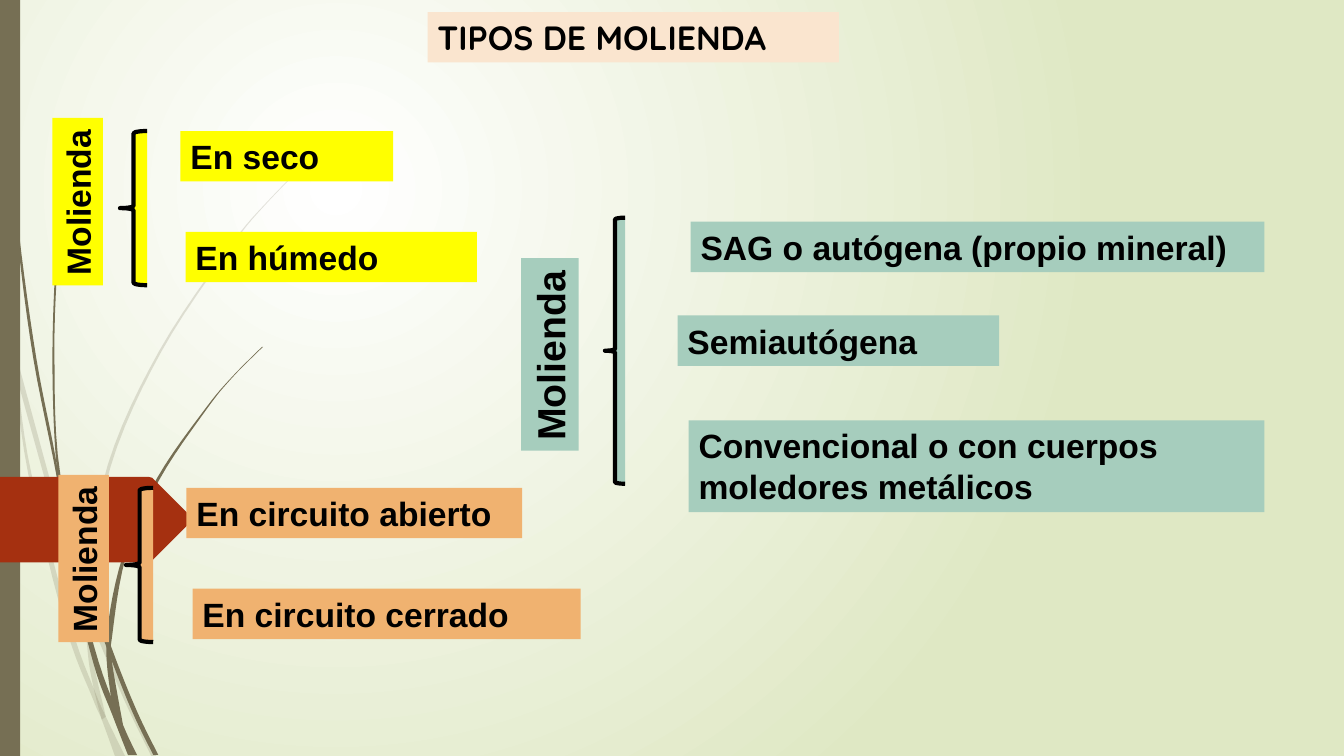
"""Build the slide on types of grinding, with its leafy background."""
from lxml import etree
from pptx import Presentation
from pptx import util as u
from pptx.dml.color import RGBColor
from pptx.enum import shapes, text
from pptx.oxml import ns

BLACK, OLIVE, RUST, PEACH = "000000", "766F54", "A53010", "FAE5CF"
YELLOW, GREEN, ORANGE = "FFFF00", "A6CDBD", "F0B270"
GLOW = ("FFFFFF", "DFE8C4")

TITLE = ("TIPOS DE MOLIENDA", (4.24, 0.12, 4.08, 0.5))
LABEL = "Molienda"
GROUPS = [
    (YELLOW, 24, (-0.06, 1.75, 1.66, 0.5), (1.19, 1.3, 0.27, 1.53), [
        ("En seco", (1.79, 1.3, 2.11, 0.5)),
        ("En húmedo", (1.84, 2.3, 2.89, 0.5))]),
    (GREEN, 28, (4.5, 3.23, 1.91, 0.57), (6, 2.16, 0.2, 2.64), [
        ("SAG o autógena (propio mineral)", (6.85, 2.2, 5.69, 0.5)),
        ("Convencional o con cuerpos moledores metálicos",
         (6.83, 4.17, 5.71, 0.91)),
        ("Semiautógena", (6.72, 3.13, 3.19, 0.5))]),
    (ORANGE, 24, (0, 5.29, 1.66, 0.5), (1.25, 4.84, 0.27, 1.53), [
        ("En circuito abierto", (1.85, 4.84, 3.33, 0.5)),
        ("En circuito cerrado", (1.91, 5.84, 3.85, 0.5))]),
]

PALE = [
    ([(0, 2.82), (0.09, 3.22), (0.17, 3.76), (0.31, 4.69), (0.7, 6.19),
      (0.93, 6.83), (1.05, 7.11), (1.24, 7.5)],
     [(1.14, 7.5), (1.01, 7.14), (0.92, 6.93), (0.65, 6.21), (0.28, 4.7),
      (0.11, 3.5), (0, 2.99)]),
    ([(0.14, 3.45), (0.62, 5.2), (0.85, 5.86), (0.92, 6.07), (1.27, 6.92),
      (1.55, 7.5)],
     [(1.5, 7.5), (1.23, 6.94), (0.88, 6.1), (0.58, 5.22), (0.17, 3.76)]),
    ([(3.12, 1.53), (2.68, 1.97), (2.28, 2.44), (1.58, 3.48), (1.07, 4.61),
      (0.85, 5.84), (0.87, 6.46), (0.93, 6.83), (1.01, 7.14)],
     [(1.05, 7.11), (0.91, 6.46), (0.88, 5.84), (1.1, 4.62), (1.6, 3.49),
      (2.29, 2.45), (2.68, 1.98), (3.12, 1.54)]),
]
DARK = [
    ([(0.03, 0), (0.07, 1.1), (0.17, 2.33), (0.33, 3.55), (0.57, 4.77),
      (0.68, 5.57), (0.93, 6.59), (1.11, 7.08), (1.27, 7.49)],
     [(1.36, 7.49), (1.22, 7.19), (0.98, 6.57), (0.72, 5.56), (0.55, 4.53),
      (0.36, 3.55), (0.19, 2.32), (0.08, 1.09), (0.04, 0)]),
    ([(0.7, 1.41), (0.62, 1.93), (0.56, 2.45), (0.52, 3.49), (0.55, 4.49),
      (0.64, 5.05), (0.88, 5.92), (1.11, 6.56), (1.32, 7.08), (1.52, 7.49)],
     [(1.57, 7.49), (1.36, 7.06), (1.13, 6.49), (0.93, 5.9), (0.6, 4.72),
      (0.54, 3.49), (0.58, 2.45), (0.63, 1.93), (0.7, 1.41)]),
    ([(2.6, 3.44), (2.31, 3.73), (2.04, 4.05), (1.56, 4.74), (1.22, 5.51),
      (1.06, 6.31), (1.1, 6.91), (1.17, 7.22)],
     [(1.22, 7.19), (1.11, 6.56), (1.11, 6.33), (1.25, 5.52), (1.58, 4.76),
      (2.05, 4.06), (2.31, 3.74), (2.61, 3.44)]),
]
TAG = [(0, 4.73), (1.47, 4.73), (1.51, 4.74), (1.9, 5.13), (1.91, 5.15),
       (1.9, 5.17), (1.51, 5.56), (1.47, 5.58), (0, 5.58)]


def paint(fill, tint):
    fill.solid()
    fill.fore_color.rgb = RGBColor.from_string(tint)


def place(box):
    return [u.Inches(n) for n in box]


def curve(pts, steps=6):
    ends = [pts[0], *pts, pts[-1]]
    out = []
    for a, b, c, d in zip(ends, ends[1:], ends[2:], ends[3:]):
        for k in range(steps):
            t = k / steps
            out.append(tuple(
                q + t * (r - p) / 2 + t * t * (2 * p - 5 * q + 4 * r - s) / 2
                + t ** 3 * (3 * q - p - 3 * r + s) / 2
                for p, q, r, s in zip(a, b, c, d)))
    return out + [pts[-1]]


def outline(slide, pts, tint, alpha=None):
    first, *rest = [place(pt) for pt in pts]
    pen = slide.shapes.build_freeform(*first)
    pen.add_line_segments(rest, close=True)
    form = pen.convert_to_shape()
    form.shadow.inherit = False
    paint(form.fill, tint)
    form.line.fill.background()
    if alpha:
        tone = form._element.spPr.find(".//" + ns.qn("a:srgbClr"))
        etree.SubElement(tone, ns.qn("a:alpha")).set("val", str(alpha * 1000))


def solid(slide, kind, box, tint, edge=None):
    form = slide.shapes.add_shape(kind, *place(box))
    form.shadow.inherit = False
    paint(form.fill, tint)
    if edge:
        paint(form.line.fill, edge)
        form.line.width = u.Pt(3)
    else:
        form.line.fill.background()


def write(slide, words, box, tint, size=24, face="Arial", turn=0):
    form = slide.shapes.add_textbox(*place(box))
    form.rotation = turn
    paint(form.fill, tint)
    frame = form.text_frame
    frame.word_wrap = not turn
    frame.auto_size = text.MSO_AUTO_SIZE.SHAPE_TO_FIT_TEXT
    run = frame.paragraphs[0].add_run()
    run.text = words
    run.font.name, run.font.size, run.font.bold = face, u.Pt(size), True
    paint(run.font.fill, BLACK)


def glow(slide):
    fill = slide.background.fill
    fill.gradient()
    for stop, tint, spot in zip(fill.gradient_stops, GLOW, (0, 1)):
        stop.color.rgb = RGBColor.from_string(tint)
        stop.position = spot
    grad = slide._element.find(".//" + ns.qn("a:gradFill"))
    grad.remove(grad.find(ns.qn("a:lin")))
    ring = etree.SubElement(grad, ns.qn("a:path"))
    ring.set("path", "circle")
    rect = etree.SubElement(ring, ns.qn("a:fillToRect"))
    for side, part in zip("ltrb", (50, 50, 100, 100)):
        rect.set(side, str(part * 1000))


def main():
    deck = Presentation()
    deck.slide_width, deck.slide_height = place((13.33, 7.5))
    slide = deck.slides.add_slide(deck.slide_layouts[6])
    kinds = shapes.MSO_SHAPE
    glow(slide)
    for stems, alpha in ((PALE, 20), (DARK, None)):
        for down, back in stems:
            outline(slide, curve(down) + curve(back), OLIVE, alpha)
    solid(slide, kinds.RECTANGLE, (0, 0, 0.2, 7.5), OLIVE)
    outline(slide, TAG, RUST)
    write(slide, *TITLE, PEACH, face="Quicksand")
    for tint, size, label, brace, items in GROUPS:
        for words, box in items:
            write(slide, words, box, tint)
        write(slide, LABEL, label, tint, size, turn=270)
        solid(slide, kinds.LEFT_BRACE, brace, tint, BLACK)
    deck.save("out.pptx")


if __name__ == "__main__":
    main()
